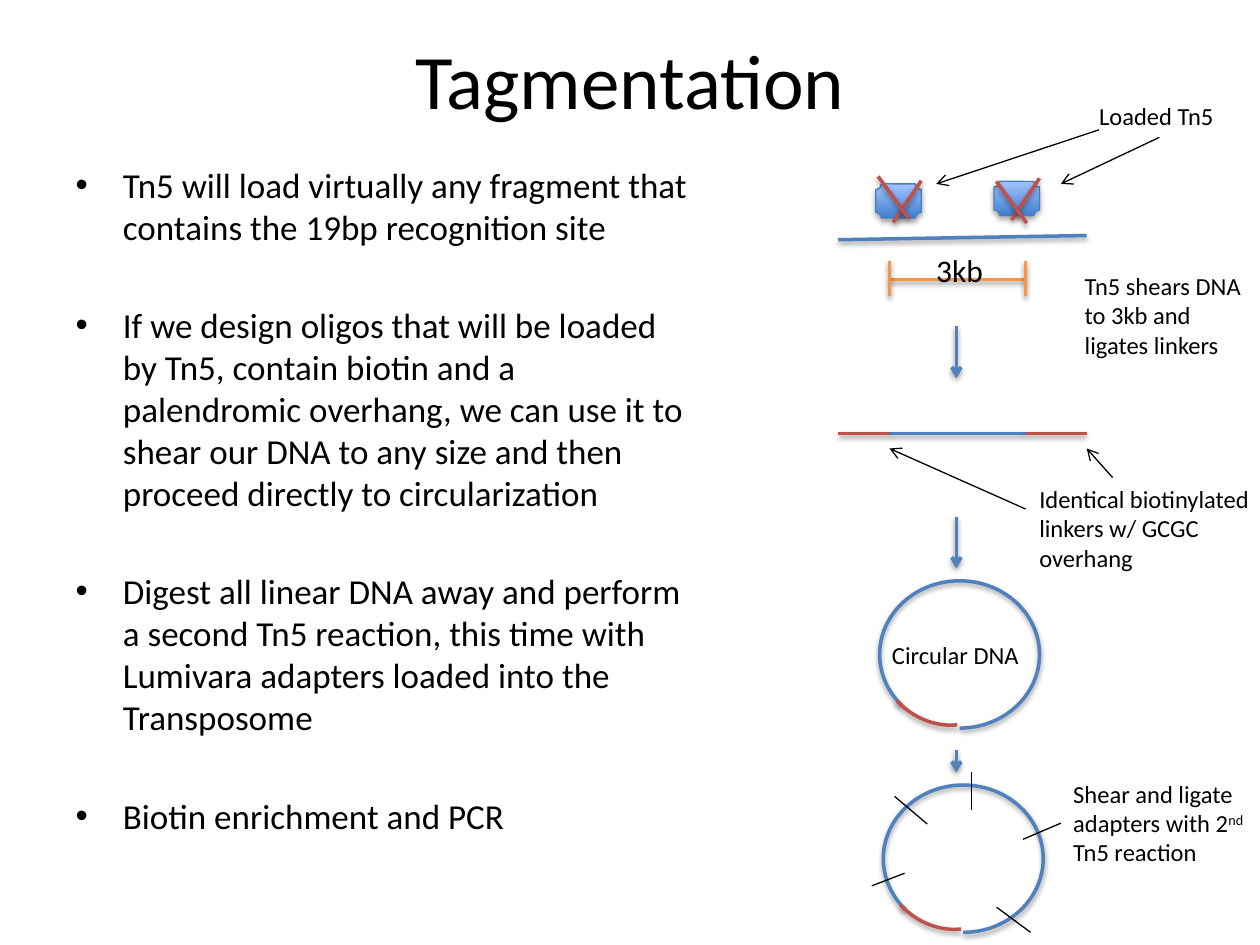
from dataclasses import dataclass

from lxml import etree
from pptx import Presentation
from pptx.dml.color import RGBColor
from pptx.enum.shapes import MSO_CONNECTOR, MSO_SHAPE
from pptx.enum.text import MSO_ANCHOR, MSO_AUTO_SIZE, PP_ALIGN
from pptx.oxml.ns import qn
from pptx.util import Pt

STRAIGHT = MSO_CONNECTOR.STRAIGHT
ARC, PLAQUE = MSO_SHAPE.ARC, MSO_SHAPE.PLAQUE
FIT, NO_FIT = MSO_AUTO_SIZE.SHAPE_TO_FIT_TEXT, MSO_AUTO_SIZE.NONE
MIDDLE, TOP = MSO_ANCHOR.MIDDLE, MSO_ANCHOR.TOP
CENTER = PP_ALIGN.CENTER
LEFT_SIDE, BOTTOM_SIDE = 1, 2


@dataclass(frozen=True)
class Theme:
    font: str = "Calibri"
    ink: str = "000000"
    dna: str = "4F81BD"
    linker: str = "C0504D"
    ruler: str = "F79646"
    tn5_dark: str = "3F80CE"
    tn5_light: str = "A4C4FF"
    tn5_edge: str = "4B7EBC"
    title: int = 44
    body: int = 20
    size_label: int = 18
    label: int = 14
    strand: float = 2
    thin: float = 0.75


THEME = Theme()
COLUMN = 479             # left edge of the diagram
INSERT = (29.3, 107.1)   # ends of the 3kb insert within the strand
STRAND_END = 142
STEP_X = 67.5

BULLETS = (
    "Tn5 will load virtually any fragment that contains the 19bp recognition site",
    "If we design oligos that will be loaded by Tn5, contain biotin and a palendromic "
    "overhang, we can use it to shear our DNA to any size and then proceed directly "
    "to circularization",
    "Digest all linear DNA away and perform a second Tn5 reaction, this time with "
    "Lumivara adapters loaded into the Transposome",
    "Biotin enrichment and PCR",
)


def rgb(color):
    return RGBColor.from_string(color)


def add_run(paragraph, text, size):
    run = paragraph.add_run()
    run.text = text
    run.font.name, run.font.size = THEME.font, Pt(size)
    run.font.color.rgb = rgb(THEME.ink)
    return run


def set_shadow(part, alpha=38, distance=1.6):
    """Give a part a soft shadow below it, or none when alpha is 0."""
    effects = etree.SubElement(part._element.spPr, qn("a:effectLst"))
    if alpha:
        shadow = etree.SubElement(
            effects, qn("a:outerShdw"), blurRad=str(Pt(3.1)), dist=str(Pt(distance)),
            dir="5400000", rotWithShape="0")
        color = etree.SubElement(shadow, qn("a:srgbClr"), val=THEME.ink)
        etree.SubElement(color, qn("a:alpha"), val=str(alpha * 1000))


def style_line(part, color, width):
    part.line.color.rgb = rgb(color)
    part.line.width = Pt(width)


def add_line(slide, origin, start, end, color=THEME.ink, arrow=False):
    """Thin and flat in ink, thick and shadowed in any other colour."""
    x, y = origin
    line = slide.shapes.add_connector(
        STRAIGHT, Pt(x + start[0]), Pt(y + start[1]), Pt(x + end[0]), Pt(y + end[1]))
    thin = color == THEME.ink
    style_line(line, color, THEME.thin if thin else THEME.strand)
    if arrow:
        etree.SubElement(line.line._get_or_add_ln(), qn("a:tailEnd"), type="arrow")
    set_shadow(line, 0 if thin else 38)
    return line


def add_label(slide, origin, box, runs, size=THEME.label):
    left, top, width, height = box
    label = slide.shapes.add_textbox(
        Pt(origin[0] + left), Pt(origin[1] + top), Pt(width), Pt(height))
    frame = label.text_frame
    frame.word_wrap, frame.auto_size = True, FIT
    for text, superscript in runs:
        run = add_run(frame.paragraphs[0], text, size)
        if superscript:
            run.font._element.set("baseline", "30000")
    return label


def place(placeholder, box, anchor):
    placeholder.left, placeholder.top, placeholder.width, placeholder.height = map(Pt, box)
    frame = placeholder.text_frame
    frame.auto_size, frame.vertical_anchor = NO_FIT, anchor
    return frame


def fill_title(slide, box):
    paragraph = place(slide.shapes.title, box, MIDDLE).paragraphs[0]
    paragraph.alignment = CENTER
    add_run(paragraph, "Tagmentation", THEME.title)


def fill_bullets(slide, box):
    frame = place(slide.placeholders[1], box, TOP)
    for index, bullet in enumerate(BULLETS):
        paragraph = frame.add_paragraph() if index else frame.paragraphs[0]
        paragraph.space_before = Pt(32 if index else 4.5)
        add_run(paragraph, bullet, THEME.body)


def add_transposome(slide, origin, second_stroke_y):
    """A Tn5 body crossed by its two loaded oligos."""
    tn5 = slide.shapes.add_shape(PLAQUE, Pt(origin[0]), Pt(origin[1]), Pt(26), Pt(19.5))
    tn5.fill.gradient()
    tn5.fill.gradient_angle = 90
    for stop, color in zip(tn5.fill.gradient_stops, (THEME.tn5_dark, THEME.tn5_light)):
        stop.color.rgb = rgb(color)
    style_line(tn5, THEME.tn5_edge, THEME.thin)
    set_shadow(tn5, 35, 1.8)
    add_line(slide, origin, (26, -1.8), (10, 22), THEME.linker)
    add_line(slide, origin, (1.4, second_stroke_y), (18.7, second_stroke_y + 23.8),
             THEME.linker)


def draw_loading(slide, origin):
    x, y = origin
    add_line(slide, origin, (0, 83), (STRAND_END, 80.6), THEME.dna)
    add_transposome(slide, (x + 89, y + 49.7), 0)
    add_transposome(slide, (x + 21.4, y + 51.1), -4.3)
    # Ruler for the insert
    add_line(slide, origin, (INSERT[1], 105.8), (INSERT[0], 105.8), THEME.ruler)
    for end in INSERT:
        add_line(slide, origin, (end, 115.2), (end, 95), THEME.ruler)
    add_label(slide, origin, (48.8, 85.7, 43, 29), [("3kb", False)], THEME.size_label)
    # Callouts
    loaded = add_label(slide, origin, (142, 0, 83, 24.5), [("Loaded Tn5", False)])
    add_line(slide, origin, (149, 20.2), (56, 51.1), arrow=True)
    pointer = add_line(slide, origin, (183.5, 24.5), (127.2, 51.1), arrow=True)
    pointer.begin_connect(loaded, BOTTOM_SIDE)
    add_label(slide, origin, (133.7, 97.2, 107.3, 58),
              [("Tn5 shears DNA to 3kb and ligates linkers", False)])


def draw_linked_fragment(slide, origin):
    add_line(slide, origin, (INSERT[0], 0), (INSERT[1], 0), THEME.dna)
    for start, end in ((0, INSERT[0]), (INSERT[1], STRAND_END)):
        add_line(slide, origin, (start, 0), (end, 0), THEME.linker)
    add_label(slide, origin, (107.8, 25.2, 139.7, 58),
              [("Identical biotinylated linkers w/ GCGC overhang", False)])
    add_line(slide, origin, (156.8, 25.2), (STRAND_END, 8.6), arrow=True)
    add_line(slide, origin, (INSERT[1], 43.2), (INSERT[0], 8.6), arrow=True)


def add_ring(slide, origin):
    """Circular DNA: a nearly closed ring and the linker that closes it."""
    arcs = (((0, 0, 84.2, 91.4), 90, (29.2, 0), THEME.dna),
            ((-6.5, 19.8, 75.6, 64), 37.9, (21.95, 61.79), THEME.linker))
    for (left, top, width, height), rotation, angles, color in arcs:
        arc = slide.shapes.add_shape(
            ARC, Pt(origin[0] + left), Pt(origin[1] + top), Pt(width), Pt(height))
        arc.rotation = rotation
        arc.adjustments[0], arc.adjustments[1] = angles
        arc.fill.background()
        style_line(arc, color, THEME.strand)
        set_shadow(arc)


def draw_circle(slide, origin):
    add_ring(slide, origin)
    add_label(slide, origin, (-3.6, 33.8, 98, 24.5), [("Circular DNA", False)])


def draw_second_reaction(slide, origin):
    add_ring(slide, origin)
    # Cut sites
    cuts = (((46.8, 18), (46.8, -3.6)), ((2.9, 10.1), (21.6, 25.9)),
            ((61.2, 73.4), (80.6, 87.8)), ((-10.1, 61.2), (8.6, 54)))
    for start, end in cuts:
        add_line(slide, origin, start, end)
    adapters = add_label(slide, origin, (97.9, -3.6, 113.8, 58), [
        ("Shear and ligate adapters with 2", False), ("nd", True), (" Tn5 reaction", False)])
    labelled_cut = add_line(slide, origin, (76.3, 34.6), (97.9, 25.4))
    labelled_cut.end_connect(adapters, LEFT_SIDE)


def draw_steps(slide, origin):
    for top, bottom in ((186.5, 216), (295.2, 324.7), (428.4, 441.4)):
        add_line(slide, origin, (STEP_X, top), (STEP_X, bottom), THEME.dna, arrow=True)


def main():
    deck = Presentation()
    deck.slide_width, deck.slide_height = Pt(720), Pt(540)
    slide = deck.slides.add_slide(deck.slide_layouts[1])
    fill_title(slide, (36, 0, 648, 90))
    fill_bullets(slide, (36, 90, 370, 416))
    draw_loading(slide, (COLUMN, 54))
    draw_linked_fragment(slide, (COLUMN, 247.7))
    draw_circle(slide, (506.2, 328.3))
    draw_second_reaction(slide, (508.3, 445))
    draw_steps(slide, (COLUMN, 0))
    deck.save("out.pptx")


if __name__ == "__main__":
    main()
